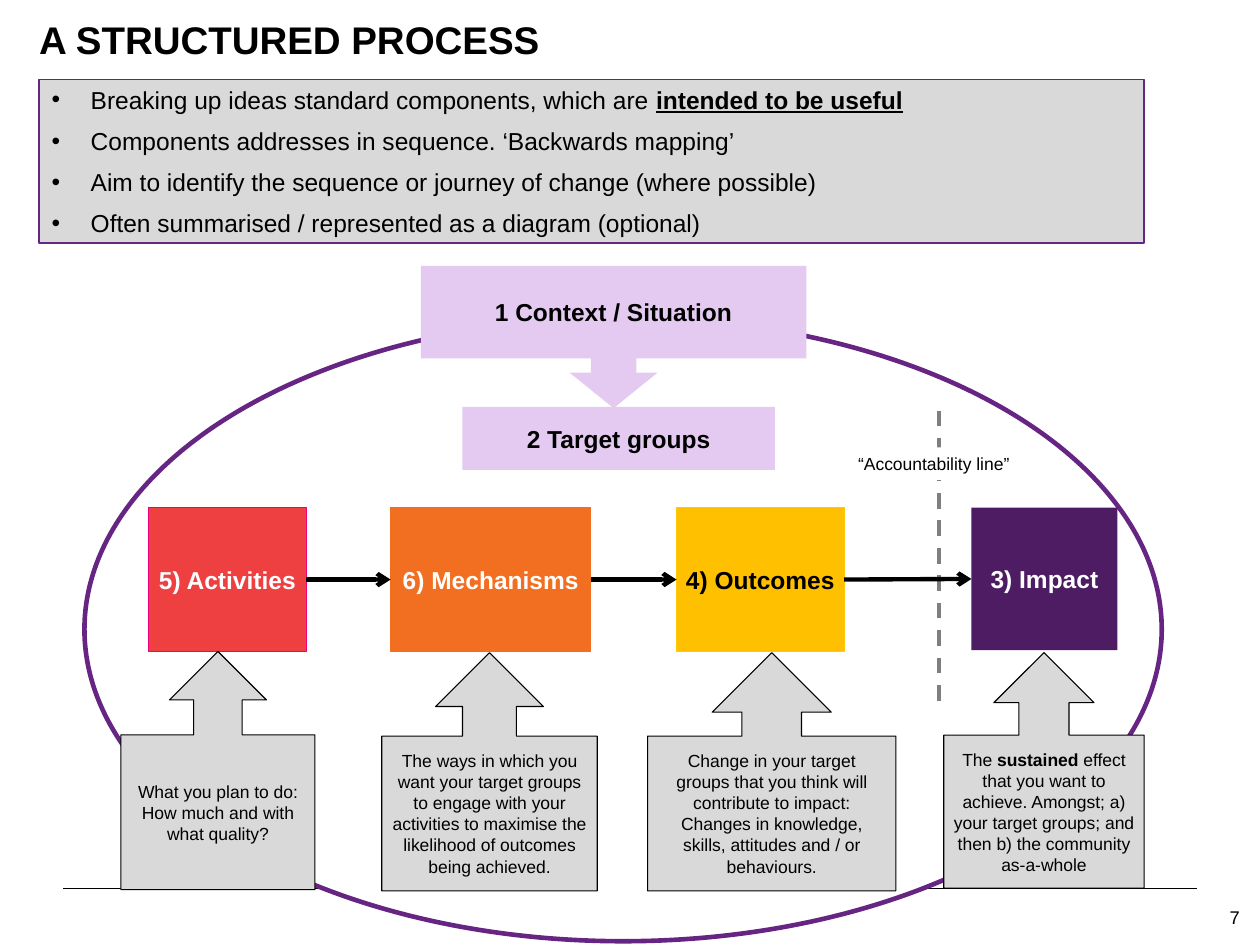
from lxml import etree
from pptx import Presentation
from pptx.dml.color import RGBColor
from pptx.enum import dml, shapes, text
from pptx.oxml.ns import qn
from pptx.util import Inches, Pt

COLORS = {
    "black": "000000", "white": "FFFFFF", "panel": "D9D9D9", "purple": "662583",
    "lilac": "E4CAF0", "red": "EE4041", "magenta": "EC0080", "orange": "F26F21",
    "yellow": "FFC000", "gold": "FFCA05", "violet": "4D1C62", "grey": "7F7F7F",
}
SHAPE = shapes.MSO_SHAPE
ALIGN = text.PP_ALIGN
ANCHOR = text.MSO_ANCHOR


def rgb(name):
    return RGBColor.from_string(COLORS[name])


def add_box(kind, at, fill, line=None, width=0.63, paragraphs=(), size=14, bold=False,
            color="black", inset=0):
    """Add a shape with centred text; each paragraph is a list of (text, bold) runs or a string."""
    sp = s.shapes.add_shape(kind, *map(Inches, at))
    sp.shadow.inherit = False
    sp.fill.solid()
    sp.fill.fore_color.rgb = rgb(fill)
    if line:
        sp.line.color.rgb = rgb(line)
        sp.line.width = Pt(width)
    else:
        sp.line.fill.background()
    tf = sp.text_frame
    tf.word_wrap = True
    tf.vertical_anchor = ANCHOR.MIDDLE
    tf.margin_left = tf.margin_right = Inches(inset)
    tf.margin_top = tf.margin_bottom = 0
    for i, runs in enumerate(paragraphs):
        p = tf.add_paragraph() if i else tf.paragraphs[0]
        p.alignment = ALIGN.CENTER
        for words, strong in [(runs, bold)] if isinstance(runs, str) else runs:
            r = p.add_run()
            r.text = words
            r.font.name, r.font.size, r.font.bold = "Arial", Pt(size), strong
            r.font.color.rgb = rgb(color)
    return sp


prs = Presentation()
prs.slide_width, prs.slide_height = Inches(10), Inches(7.5)
s = prs.slides.add_slide(prs.slide_layouts[1])

# Title
title = s.shapes.title
title.left, title.top, title.width, title.height = map(Inches, (0.31, 0.13, 9.8, 0.87))
tf = title.text_frame
tf.text = "A STRUCTURED PROCESS"
tf.auto_size = text.MSO_AUTO_SIZE.NONE
tf.margin_left = tf.margin_right = tf.margin_top = tf.margin_bottom = 0
tf.vertical_anchor = ANCHOR.TOP
p = tf.paragraphs[0]
p.alignment = ALIGN.LEFT
font = p.runs[0].font
font.name, font.size, font.bold = "Arial", Pt(22), True
font.color.rgb = rgb("black")

# Bulleted panel
body = s.placeholders[1]
body.left, body.top, body.width, body.height = map(Inches, (0.31, 0.63, 8.77, 1.3))
body.fill.solid()
body.fill.fore_color.rgb = rgb("panel")
body.line.color.rgb = rgb("purple")
body.line.width = Pt(0.75)
tf = body.text_frame
tf.auto_size = text.MSO_AUTO_SIZE.NONE
tf.vertical_anchor = ANCHOR.MIDDLE
bullets = [
    ("Breaking up ideas standard components, which are ", "intended to be useful"),
    ("Components addresses in sequence. ‘Backwards mapping’",),
    ("Aim to identify the sequence or journey of change (where possible)",),
    ("Often summarised / represented as a diagram (optional)",),
]
for i, runs in enumerate(bullets):
    p = tf.add_paragraph() if i else tf.paragraphs[0]
    pPr = p._p.get_or_add_pPr()
    pPr.set("marL", str(Inches(0.31)))
    pPr.set("indent", str(-Inches(0.31)))
    etree.SubElement(pPr, qn("a:buChar")).set("char", "•")
    p.space_before = Pt(6.75 if i else 0)
    for j, words in enumerate(runs):
        r = p.add_run()
        r.text = words
        r.font.name, r.font.size = "Arial", Pt(14)
        r.font.bold = r.font.underline = j == 1
        r.font.color.rgb = rgb("black")

# Footer rule and page number
rule = s.shapes.add_connector(shapes.MSO_CONNECTOR.STRAIGHT,
                              Inches(0.5), Inches(7.05), Inches(9.5), Inches(7.05))
rule.line.color.rgb = rgb("black")
rule.line.width = Pt(0.25)
number = s.shapes.add_textbox(*map(Inches, (9.34, 7.12, 0.5, 0.25)))
tf = number.text_frame
tf.text = "7"
tf.word_wrap = True
tf.vertical_anchor = ANCHOR.BOTTOM
tf.margin_left = tf.margin_right = tf.margin_top = tf.margin_bottom = 0
p = tf.paragraphs[0]
p.alignment = ALIGN.RIGHT
p.runs[0].font.name, p.runs[0].font.size = "Arial", Pt(10.5)
p.runs[0].font.color.rgb = rgb("black")

# Surrounding ellipse, context and target groups
add_box(SHAPE.OVAL, (0.67, 2.52, 8.55, 4.95), "white", "purple", 2.63)
context = add_box(SHAPE.DOWN_ARROW_CALLOUT, (3.34, 2.11, 3.06, 1.13), "lilac",
                  paragraphs=["1 Context / Situation"], bold=True)
for i, value in enumerate((0.32, 0.31, 0.25, 0.65)):
    context.adjustments[i] = value
add_box(SHAPE.RECTANGLE, (3.67, 3.23, 2.48, 0.5), "lilac",
        paragraphs=["2 Target groups"], bold=True)

# Accountability line
divider = s.shapes.add_connector(shapes.MSO_CONNECTOR.STRAIGHT,
                                 Inches(7.45), Inches(3.26), Inches(7.45), Inches(5.62))
divider.line.color.rgb = rgb("grey")
divider.line.width = Pt(2.25)
divider.line.dash_style = dml.MSO_LINE.DASH
add_box(SHAPE.RECTANGLE, (6.7, 3.55, 1.42, 0.26), "white",
        paragraphs=["“Accountability line”"], size=10)

# Process steps: label, left, width, height, fill, line, text colour
steps = [
    ("5) Activities", 1.18, 1.25, 1.14, "red", "magenta", "white"),
    ("6) Mechanisms", 3.1, 1.59, 1.14, "orange", "orange", "white"),
    ("4) Outcomes", 5.37, 1.33, 1.14, "yellow", "gold", "black"),
    ("3) Impact", 7.71, 1.16, 1.13, "violet", None, "white"),
]
boxes = [add_box(SHAPE.RECTANGLE, (left, 4.03, width, height), fill, line,
                 paragraphs=[label], bold=True, color=color)
         for label, left, width, height, fill, line, color in steps]

# Explanations: left, top, width, height, side inset, paragraphs
notes = [
    (0.96, 5.17, 1.54, 1.89, 0.06,
     ["What you plan to do:", "How much and with what quality?"]),
    (3.03, 5.18, 1.71, 1.89, 0.06,
     ["The ways in which you want your target groups to engage with your activities "
      "to maximise the likelihood of outcomes being achieved."]),
    (5.14, 5.18, 1.97, 1.89, 0.1,
     ["Change in your target groups that you think will contribute to impact:",
      "Changes in knowledge, skills, attitudes and / or behaviours."]),
    (7.49, 5.18, 1.59, 1.87, 0.05,
     [[("The ", False), ("sustained", True),
       (" effect that you want to achieve. Amongst; a) your target groups; "
        "and then b) the community as-a-whole", False)]]),
]
for left, top, width, height, inset, paragraphs in notes:
    add_box(SHAPE.UP_ARROW_CALLOUT, (left, top, width, height), "panel", "black",
            paragraphs=paragraphs, size=10, inset=inset)

# Arrows between steps
arrows = []
for start, end in zip(boxes, boxes[1:]):
    arrow = s.shapes.add_connector(shapes.MSO_CONNECTOR.STRAIGHT, 0, 0, 0, 0)
    arrow.begin_connect(start, 3)
    arrow.end_connect(end, 1)
    arrow.line.color.rgb = rgb("black")
    arrow.line.width = Pt(2.5)
    etree.SubElement(arrow.line._get_or_add_ln(), qn("a:tailEnd")).set("type", "arrow")
    arrows.append(arrow)

for connector in [rule, divider, *arrows]:
    etree.SubElement(connector._element.spPr, qn("a:effectLst"))

prs.save("out.pptx")
